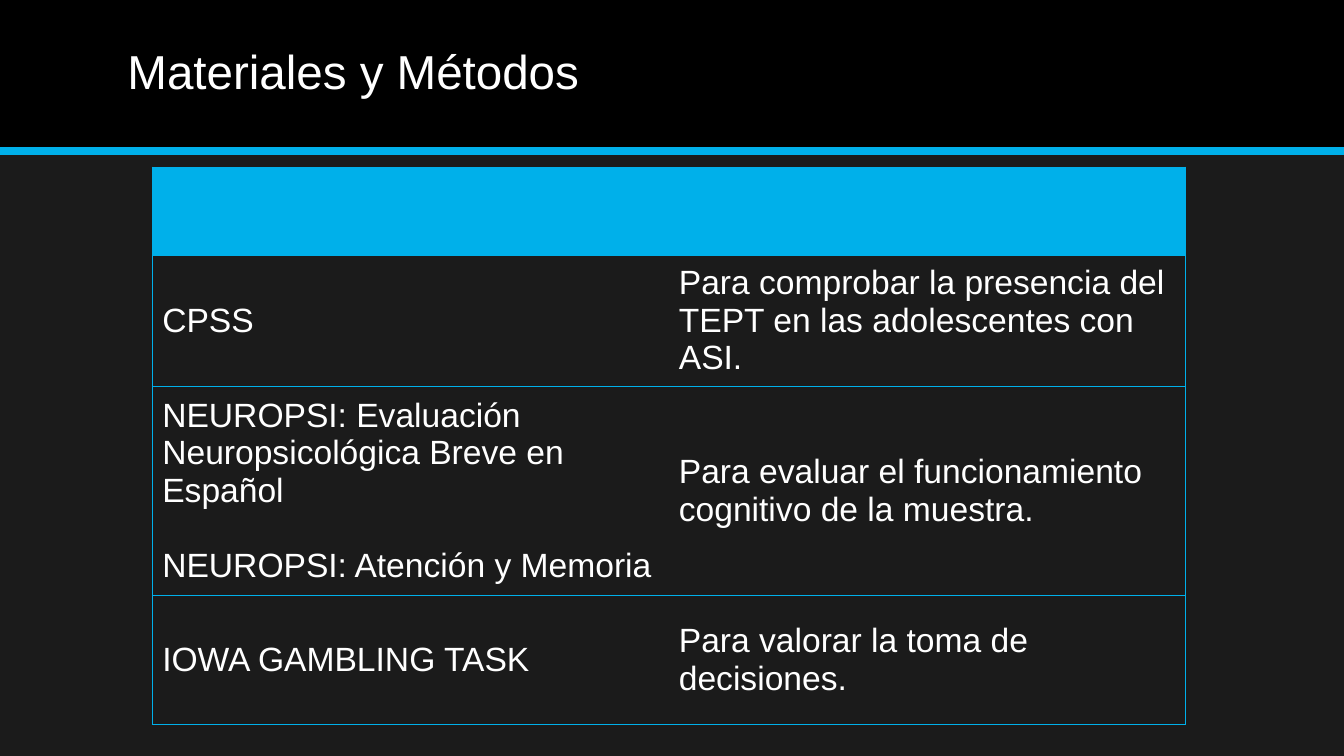
from lxml import etree
from pptx import Presentation
from pptx.dml.color import RGBColor
from pptx.enum.shapes import MSO_CONNECTOR, MSO_SHAPE
from pptx.enum.text import MSO_ANCHOR
from pptx.oxml.ns import qn
from pptx.util import Pt

PX = 9525
WIDE, HIGH = 1280, 720
BAND = 144
BLACK = RGBColor(0x00, 0x00, 0x00)
DARK = RGBColor(0x1B, 0x1B, 0x1B)
WHITE = RGBColor(0xFF, 0xFF, 0xFF)
BLUE = RGBColor(0x00, 0xB0, 0xEA)
FONT = "Arial"
RECT = MSO_SHAPE.RECTANGLE
LINE = MSO_CONNECTOR.STRAIGHT
MIDDLE = MSO_ANCHOR.MIDDLE

COLS = [492, 492]
ROWS = [84, 108, 151, 123]
CELLS = [
    [[], []],
    [["CPSS"],
     ["Para comprobar la presencia del TEPT en las adolescentes con ASI."]],
    [["NEUROPSI: Evaluación Neuropsicológica Breve en Español",
      "NEUROPSI: Atención y Memoria"],
     ["Para evaluar el funcionamiento cognitivo de la muestra."]],
    [["IOWA GAMBLING TASK"],
     ["Para valorar la toma de decisiones."]],
]


def px(*sizes):
    return [size * PX for size in sizes]


def write(frame, texts, size, gap=0):
    """Fill a text frame, with a gap in points between paragraphs."""
    for i, text in enumerate(texts):
        para = frame.add_paragraph() if i else frame.paragraphs[0]
        para.text = text
        para.font.name = FONT
        para.font.size = Pt(size)
        para.font.color.rgb = WHITE
        if i:
            para.space_before = Pt(gap)


def add_band(slide):
    band = slide.shapes.add_shape(RECT, *px(0, 0, WIDE, BAND))
    band.shadow.inherit = False
    band.fill.solid()
    band.fill.fore_color.rgb = BLACK
    band.line.fill.background()


def add_rule(slide):
    rule = slide.shapes.add_connector(LINE, *px(0, BAND, WIDE, BAND))
    rule.line.color.rgb = BLUE
    rule.line.width = Pt(6)
    props = rule._element.spPr
    etree.SubElement(props, qn("a:effectLst"))


def add_title(slide, text):
    box = slide.shapes.add_textbox(*px(112, 13, 1056, 115))
    frame = box.text_frame
    frame.word_wrap = True
    frame.vertical_anchor = MIDDLE
    write(frame, [text], 34)
    frame.paragraphs[0].line_spacing = 0.9


def add_edge(cell, side, shown):
    props = cell._tc.get_or_add_tcPr()
    edge = etree.SubElement(props, qn(f"a:ln{side}"), w=str(Pt(0.5)))
    if shown:
        fill = etree.SubElement(edge, qn("a:solidFill"))
        etree.SubElement(fill, qn("a:srgbClr"), val=str(BLUE))
    else:
        etree.SubElement(edge, qn("a:noFill"))


def add_grid(slide):
    place = px(145, 159, sum(COLS), sum(ROWS))
    table = slide.shapes.add_table(len(ROWS), len(COLS), *place).table
    table.horz_banding = False
    for col, width in zip(table.columns, COLS):
        col.width = width * PX
    for row, height in zip(table.rows, ROWS):
        row.height = height * PX
    last = len(COLS) - 1
    for r, line in enumerate(CELLS):
        for c, texts in enumerate(line):
            cell = table.cell(r, c)
            cell.vertical_anchor = MIDDLE
            write(cell.text_frame, texts, 24, gap=27)
            # Outer frame and row lines, none between the columns
            shown = {"L": c == 0, "R": c == last, "T": True, "B": True}
            for side in shown:
                add_edge(cell, side, shown[side])
            if r == 0:
                cell.fill.solid()
                cell.fill.fore_color.rgb = BLUE
            else:
                cell.fill.background()


def main():
    deck = Presentation()
    deck.slide_width, deck.slide_height = px(WIDE, HIGH)
    slide = deck.slides.add_slide(deck.slide_layouts[6])
    slide.background.fill.solid()
    slide.background.fill.fore_color.rgb = DARK

    # Heading
    add_band(slide)
    add_rule(slide)
    add_title(slide, "Materiales y Métodos")

    # Instruments and their purpose
    add_grid(slide)

    deck.save("out.pptx")


if __name__ == "__main__":
    main()
